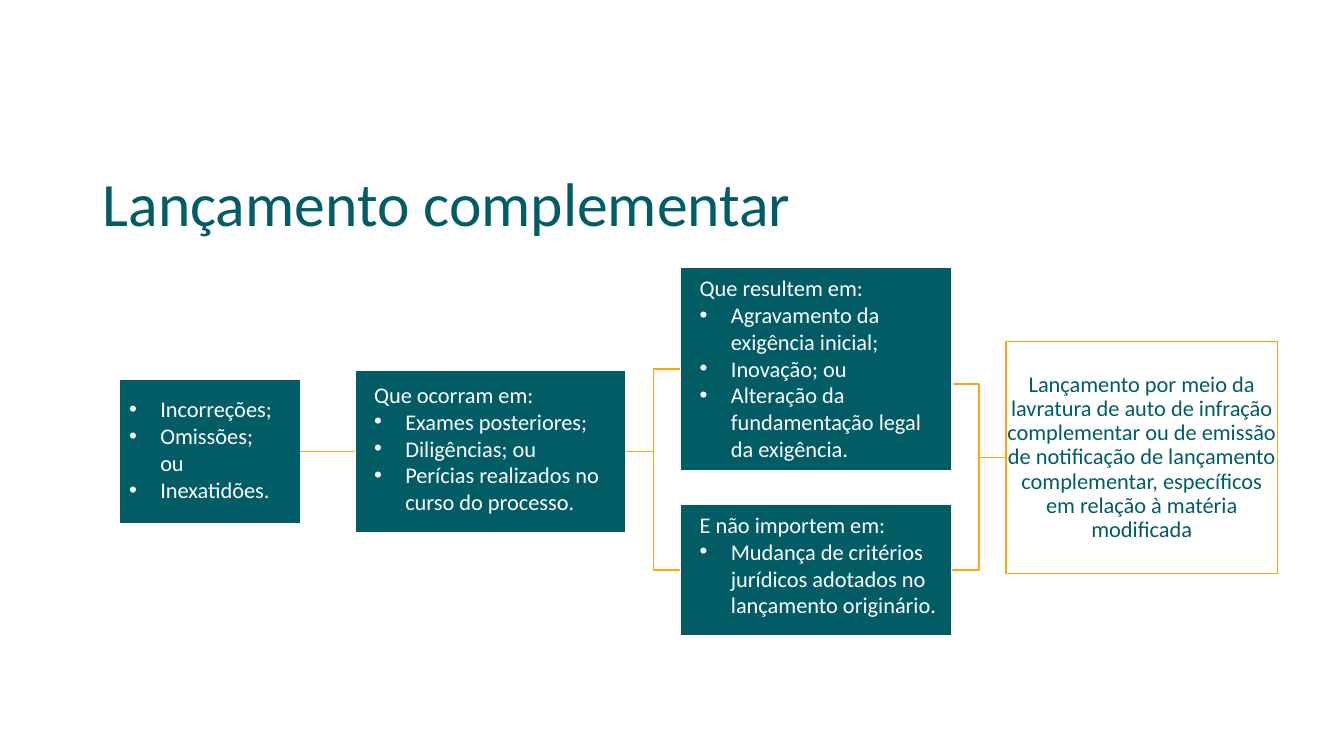
"""Build the slide on complementary tax assessment as a boxed process flow."""
from dataclasses import dataclass
from typing import Any

from lxml.etree import SubElement
from pptx import Presentation
from pptx.dml.color import RGBColor
from pptx.enum.shapes import MSO_CONNECTOR as Connector, MSO_SHAPE as Preset
from pptx.enum.text import MSO_ANCHOR as Anchor, PP_ALIGN as Align
from pptx.oxml.ns import qn
from pptx.util import Emu, Inches, Pt


@dataclass(frozen=True)
class Theme:
    teal: RGBColor = RGBColor(0x01, 0x5C, 0x65)
    orange: RGBColor = RGBColor(0xFF, 0xA5, 0x13)
    white: RGBColor = RGBColor(0xFF, 0xFF, 0xFF)
    font: str = "Calibri"
    title_size: Pt = Pt(44)
    body_size: Pt = Pt(16)
    line_width: Pt = Pt(1)
    indent: Emu = Inches(0.31)


@dataclass(frozen=True)
class Box:
    """Place one box by its left edge, middle line, size and insets in grid units."""
    left: float
    middle: float
    width: float
    height: float
    insets: tuple[float, float, float, float]
    bullets: tuple[str, ...] = ()
    heading: str = ""
    align: Align = Align.LEFT
    outlined: bool = False


THEME = Theme()
SLIDE_WIDTH, SLIDE_HEIGHT = Inches(13.33), Inches(7.5)
BOX_WIDTH, GAP = 20.18, 4.05
FIRST_LEFT, FIRST_WIDTH = 8.85, 13.5
OCCUR, RESULT, OUTCOME = (FIRST_LEFT + FIRST_WIDTH + GAP + step * (BOX_WIDTH + GAP)
                          for step in range(3))
MAIN_MIDDLE = 59.73

BOXES = {
    "causes": Box(FIRST_LEFT, MAIN_MIDDLE, FIRST_WIDTH, 19.07, (0.75, 2.13, 1.8, 0),
                  ("Incorreções;", "Omissões; ou", "Inexatidões."), align=Align.JUSTIFY),
    "occasions": Box(OCCUR, MAIN_MIDDLE, BOX_WIDTH, 21.6, (1.43, 1.47, 0.6, 0),
                     ("Exames posteriores;", "Diligências; ou",
                      "Perícias realizados no curso do processo."), "Que ocorram em:"),
    "results": Box(RESULT, 48.8, BOX_WIDTH, 26.93, (1.43, 0.93, 0.6, 0),
                   ("Agravamento da exigência inicial;", "Inovação; ou",
                    "Alteração da fundamentação legal da exigência."), "Que resultem em:"),
    "limits": Box(RESULT, 75.4, BOX_WIDTH, 17.47, (1.43, 0.93, 0.6, 0),
                  ("Mudança de critérios jurídicos adotados no lançamento originário.",),
                  "E não importem em:"),
    "outcome": Box(OUTCOME, 60.53, BOX_WIDTH, 30.67, (0.08, 0.13, 0.08, 0.13),
                   heading="Lançamento por meio da lavratura de auto de infração complementar "
                           "ou de emissão de notificação de lançamento complementar, "
                           "específicos em relação à matéria modificada",
                   align=Align.CENTER, outlined=True),
}
LINKS = [("causes", "occasions", Connector.STRAIGHT),
         ("occasions", "results", Connector.ELBOW),
         ("occasions", "limits", Connector.ELBOW),
         ("limits", "outcome", Connector.ELBOW)]


def column(units: float) -> Emu:
    """Return hundredths of the slide width as a length."""
    return Emu(round(SLIDE_WIDTH * units / 100))


def row(units: float) -> Emu:
    """Return hundredths of the slide height as a length."""
    return Emu(round(SLIDE_HEIGHT * units / 100))


def apply(target: Any, formats: dict[str, Any]) -> None:
    """Set each named format value on the target."""
    for name, value in formats.items():
        setattr(target, name, value)


def style_line(line: Any, color: RGBColor) -> None:
    """Give a line its colour and the common width."""
    line.color.rgb = color
    line.width = THEME.line_width


def write(paragraph: Any, text: str, size: Pt, color: RGBColor,
          formats: dict[str, Any], bullet: bool = False) -> None:
    """Fill one paragraph, with a hanging bullet if asked."""
    apply(paragraph, formats)
    if bullet:
        properties = paragraph._p.get_or_add_pPr()
        properties.set("marL", str(THEME.indent))
        properties.set("indent", str(-THEME.indent))
        SubElement(properties, qn("a:buFont")).set("typeface", "Arial")
        SubElement(properties, qn("a:buChar")).set("char", "•")
    run = paragraph.add_run()
    run.text = text
    apply(run.font, {"name": THEME.font, "size": size})
    run.font.color.rgb = color


def add_title(slide: Any, text: str) -> None:
    """Add the slide title."""
    frame = slide.shapes.add_textbox(column(6.9), row(17.6), column(86.27), row(19.33)).text_frame
    apply(frame, {"word_wrap": True, "vertical_anchor": Anchor.MIDDLE})
    write(frame.paragraphs[0], text, THEME.title_size, THEME.teal, {"line_spacing": 0.9})


def add_box(slide: Any, box: Box) -> Any:
    """Add one rectangle with its heading and bullets."""
    shape = slide.shapes.add_shape(Preset.RECTANGLE, column(box.left),
                                   row(box.middle - box.height / 2),
                                   column(box.width), row(box.height))
    shape.shadow.inherit = False
    shape.fill.solid()
    shape.fill.fore_color.rgb = THEME.white if box.outlined else THEME.teal
    style_line(shape.line, THEME.orange if box.outlined else THEME.white)
    left, top, right, bottom = box.insets
    frame = shape.text_frame
    apply(frame, {"word_wrap": True, "margin_left": column(left), "margin_top": row(top),
                  "margin_right": column(right), "margin_bottom": row(bottom),
                  "vertical_anchor": Anchor.MIDDLE if box.outlined else Anchor.TOP})
    lines = [(box.heading, False)] if box.heading else []
    lines += [(text, True) for text in box.bullets]
    color = THEME.teal if box.outlined else THEME.white
    formats = {"alignment": box.align, "line_spacing": 0.9 if box.outlined else 1.0}
    for index, (text, bullet) in enumerate(lines):
        paragraph = frame.paragraphs[0] if index == 0 else frame.add_paragraph()
        write(paragraph, text, THEME.body_size, color, formats, bullet)
    return shape


def add_link(slide: Any, source: Any, target: Any, kind: Connector) -> None:
    """Join the right side of one box to the left side of another."""
    connector = slide.shapes.add_connector(kind, 0, 0, 0, 0)
    connector.begin_connect(source, 3)
    connector.end_connect(target, 1)
    SubElement(connector._element.spPr, qn("a:effectLst"))
    style_line(connector.line, THEME.orange)


def add_branch(slide: Any) -> None:
    """Add the corner that drops from the results box to the outcome link."""
    start = RESULT + BOX_WIDTH + 0.15
    turn = OUTCOME - GAP / 2
    builder = slide.shapes.build_freeform(column(start), row(50.8))
    builder.add_line_segments([(column(turn), row(50.8)), (column(turn), row(61.4))], close=False)
    branch = builder.convert_to_shape()
    branch.shadow.inherit = False
    branch.fill.background()
    style_line(branch.line, THEME.orange)


def main() -> None:
    """Build and save the slide."""
    presentation = Presentation()
    apply(presentation, {"slide_width": SLIDE_WIDTH, "slide_height": SLIDE_HEIGHT})
    slide = presentation.slides.add_slide(presentation.slide_layouts[6])
    add_title(slide, "Lançamento complementar")
    shapes = {name: add_box(slide, box) for name, box in BOXES.items()}
    for source, target, kind in LINKS:
        add_link(slide, shapes[source], shapes[target], kind)
    add_branch(slide)
    presentation.save("out.pptx")


if __name__ == "__main__":
    main()
